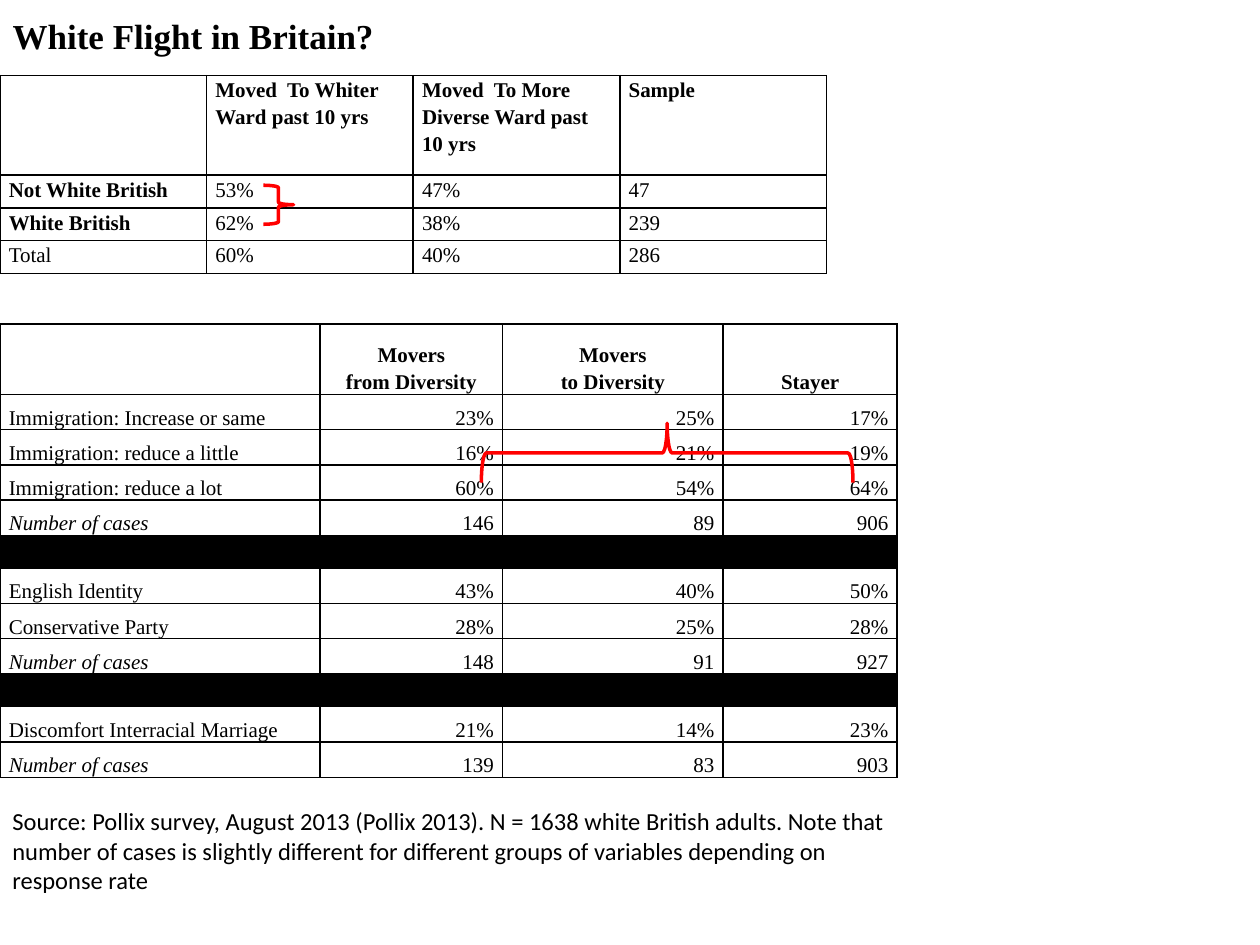
import pptx
import pptx.dml.color
import pptx.enum.shapes
import pptx.enum.text
import pptx.oxml
import pptx.oxml.ns
import pptx.util
from pptx.util import Inches

BLACK = pptx.dml.color.RGBColor(0x00, 0x00, 0x00)
RED = pptx.dml.color.RGBColor(0xFF, 0x00, 0x00)
SERIF, SANS = "Times New Roman", "Calibri"
ALIGN = pptx.enum.text.PP_ALIGN
ANCHOR = pptx.enum.text.MSO_ANCHOR
NAMESPACE = pptx.oxml.ns.nsdecls("a")

MOVES = [
    ["", "Moved  To Whiter Ward past 10 yrs", "Moved  To More Diverse Ward past 10 yrs", "Sample"],
    ["Not White British", "53%", "47%", "47"],
    ["White British", "62%", "38%", "239"],
    ["Total", "60%", "40%", "286"],
]
DIVIDER = [""] * 4
ATTITUDES = [
    ["", "Movers\nfrom Diversity", "Movers\nto Diversity", "Stayer"],
    ["Immigration: Increase or same", "23%", "25%", "17%"],
    ["Immigration: reduce a little", "16%", "21%", "19%"],
    ["Immigration: reduce a lot", "60%", "54%", "64%"],
    ["Number of cases", "146", "89", "906"],
    DIVIDER,
    ["English Identity", "43%", "40%", "50%"],
    ["Conservative Party", "28%", "25%", "28%"],
    ["Number of cases", "148", "91", "927"],
    DIVIDER,
    ["Discomfort Interracial Marriage", "21%", "14%", "23%"],
    ["Number of cases", "139", "83", "903"],
]
SOURCE = (
    "Source: Pollix survey, August 2013 (Pollix 2013). N = 1638 white British adults. "
    "Note that number of cases is slightly different for different groups of variables "
    "depending on response rate"
)


def moves_style(row, column):
    """Bold header and bold names of the two compared groups."""
    return {"bold": row == 0 or (column == 0 and row < 3)}


def attitudes_style(row, column):
    """Centred header, right-aligned figures, italic case counts."""
    alignment = ALIGN.CENTER if row == 0 else ALIGN.RIGHT if column else ALIGN.LEFT
    return {
        "bold": row == 0,
        "italic": ATTITUDES[row][column] == "Number of cases",
        "alignment": alignment,
        "space_after": pptx.util.Pt(10 if row else 0),
        "anchor": ANCHOR.BOTTOM,
    }


class SlideBuilder:
    def __init__(self, deck):
        self.page = deck.slides.add_slide(deck.slide_layouts[5])

    def add_span(self, para, text, font=SERIF, size=12, bold=False, italic=False):
        span = para.add_run()
        span.text = text
        formats = {"name": font, "size": pptx.util.Pt(size), "bold": bold, "italic": italic}
        for name, value in formats.items():
            setattr(span.font, name, value)
        span.font.color.rgb = BLACK

    def place(self, box, left, top, width, height):
        position = {"left": left, "top": top, "width": width, "height": height}
        for name, value in position.items():
            setattr(box, name, Inches(value))

    def title(self, text, *place):
        box = self.page.shapes.title
        self.place(box, *place)
        frame = box.text_frame
        frame.word_wrap = True
        frame.auto_size = pptx.enum.text.MSO_AUTO_SIZE.NONE
        frame.vertical_anchor = ANCHOR.MIDDLE
        frame.paragraphs[0].alignment = ALIGN.LEFT
        self.add_span(frame.paragraphs[0], text, size=20, bold=True)

    def note(self, text, *place):
        box = self.page.shapes.add_textbox(*map(Inches, place))
        box.text_frame.word_wrap = True
        self.add_span(box.text_frame.paragraphs[0], text, font=SANS, size=14)

    def brace(self, *place, rotation=0):
        kind = pptx.enum.shapes.MSO_SHAPE.RIGHT_BRACE
        shape = self.page.shapes.add_shape(kind, *map(Inches, place))
        shape.rotation = rotation
        shape.shadow.inherit = False
        shape.fill.background()
        shape.line.color.rgb = RED
        shape.line.width = pptx.util.Pt(2)

    def border(self, cell):
        properties = cell._tc.get_or_add_tcPr()
        for index, side in enumerate(("lnL", "lnR", "lnT", "lnB")):
            line = pptx.oxml.parse_xml(
                f'<a:{side} {NAMESPACE} w="12700"><a:solidFill>'
                f'<a:srgbClr val="{BLACK}"/></a:solidFill></a:{side}>'
            )
            properties.insert(index, line)

    def cell(self, cell, text, bold=False, italic=False, alignment=ALIGN.LEFT,
             space_after=0, anchor=ANCHOR.TOP):
        formats = {
            "margin_left": Inches(0.07), "margin_right": Inches(0.07),
            "margin_top": 0, "margin_bottom": 0, "vertical_anchor": anchor,
        }
        for name, value in formats.items():
            setattr(cell, name, value)
        frame = cell.text_frame
        for index, line in enumerate(text.split("\n")):
            para = frame.add_paragraph() if index else frame.paragraphs[0]
            para.alignment = alignment
            para.line_spacing = 1.15
            para.space_after = space_after
            if line:
                self.add_span(para, line, bold=bold, italic=italic)
            else:
                # Keeps an empty cell from stretching its row
                para._p.append(pptx.oxml.parse_xml(f'<a:endParaRPr {NAMESPACE} sz="1200"/>'))

    def table(self, rows, widths, heights, left, top, style):
        size = map(Inches, (left, top, sum(widths), sum(heights)))
        table = self.page.shapes.add_table(len(rows), len(widths), *size).table
        for name in ("first_row", "horz_banding"):
            setattr(table, name, False)
        for column, width in zip(table.columns, widths):
            column.width = Inches(width)
        for row, (values, height) in enumerate(zip(rows, heights)):
            table.rows[row].height = Inches(height)
            for column, value in enumerate(values):
                cell = table.cell(row, column)
                self.cell(cell, value, **style(row, column))
                if values is DIVIDER:
                    cell.fill.solid()
                    cell.fill.fore_color.rgb = BLACK
                else:
                    cell.fill.background()
                self.border(cell)
        return table


def main():
    deck = pptx.Presentation()
    deck.slide_width, deck.slide_height = Inches(10), Inches(7.5)
    slide = SlideBuilder(deck)

    # Title and table of moves by group
    slide.title("White Flight in Britain?", 0, 0.06, 5.47, 0.44)
    slide.table(MOVES, [1.64] * 4, [0.79] + [0.26] * 3, 0, 0.6, moves_style)

    # Table of attitudes, with black bands between its groups
    heights = [0.26 if row is DIVIDER else 0.28 for row in ATTITUDES]
    heights[0] = 0.56
    attitudes = slide.table(ATTITUDES, [2.54, 1.45, 1.75, 1.38], heights, 0, 2.57, attitudes_style)
    band = ATTITUDES.index(DIVIDER)
    attitudes.cell(band, 0).merge(attitudes.cell(band, 3))

    # Source note
    slide.note(SOURCE, 0, 6.35, 7.36, 0.81)

    # Braces marking the compared figures
    slide.brace(2.09, 1.47, 0.24, 0.31)
    slide.brace(5.06, 2.12, 0.47, 2.95, rotation=270)

    deck.save("out.pptx")


if __name__ == "__main__":
    main()
